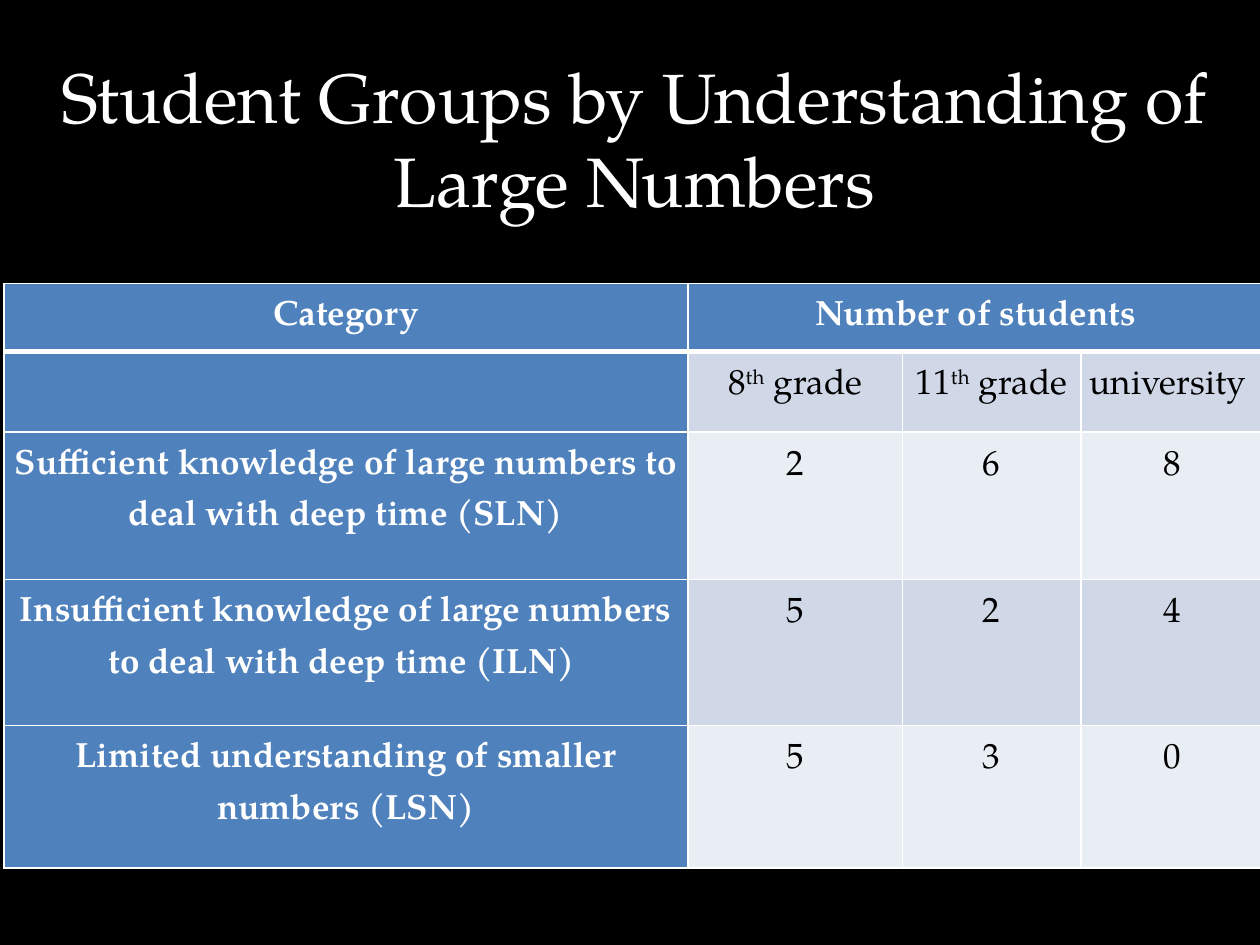
import pptx
import pptx.dml.color
import pptx.enum.text
import pptx.oxml
import pptx.oxml.ns
import pptx.util

Pt = pptx.util.Pt
ALIGN = pptx.enum.text.PP_ALIGN
FONT = "TeX Gyre Pagella"
COLORS = {
    "background": "000000",
    "light": "FFFFFF",
    "dark": "000000",
    "header": "4F81BD",
    "band": "D0D8E8",
    "plain": "E9EDF4",
}
TITLE = ["Student Groups by Understanding of", "Large Numbers"]
ROWS = [
    ["Category", "Number of students", "", ""],
    ["", "8^th^ grade", "11^th^ grade", "university"],
    ["Sufficient knowledge of large numbers to deal with deep time (SLN)", "2", "6", "8"],
    ["Insufficient knowledge of large numbers to deal with deep time (ILN) ", "5", "2", "4"],
    ["Limited understanding of smaller numbers (LSN)", "5", "3", "0"],
]
COLUMN_WIDTHS = [391, 122.4, 102.2, 104.4]
ROW_HEIGHTS = [38.9, 46.1, 84.2, 83.5, 81.4]


def rgb(name):
    return pptx.dml.color.RGBColor.from_string(COLORS[name])


def format_font(font, size, color, bold=False):
    font.name = FONT
    font.size = Pt(size)
    font.bold = bold
    font.color.rgb = rgb(color)


def add_title(page):
    title = page.shapes.title
    title.left, title.top, title.width, title.height = Pt(22.3), Pt(26.6), Pt(680.4), Pt(104.4)
    frame = title.text_frame
    frame.word_wrap = False
    frame.auto_size = pptx.enum.text.MSO_AUTO_SIZE.NONE
    frame.text = "\n".join(TITLE)
    for para in frame.paragraphs:
        para.alignment = ALIGN.CENTER
        format_font(para.font, 40, "light")


def set_borders(cell, **widths):
    """Draw light cell borders; widths maps L, R, T and B to points."""
    properties = cell._tc.get_or_add_tcPr()
    for position, (side, width) in enumerate(widths.items()):
        properties.insert(position, pptx.oxml.parse_xml(
            f'<a:ln{side} {pptx.oxml.ns.nsdecls("a")} w="{Pt(width)}"><a:solidFill>'
            f'<a:srgbClr val="{COLORS["light"]}"/></a:solidFill></a:ln{side}>'))


def write_cell(cell, text, color, bold, alignment):
    """Write text in which ^ marks enclose a superscript."""
    cell.margin_left = cell.margin_right = Pt(5)
    cell.margin_top = cell.margin_bottom = 0
    para = cell.text_frame.paragraphs[0]
    para.alignment = alignment
    para.line_spacing = 1.5
    format_font(para.font, 20, color, bold)
    for index, part in enumerate(text.split("^")):
        if not part:
            continue
        span = para.add_run()
        span.text = part
        format_font(span.font, 20, color, bold)
        if index % 2:
            span._r.get_or_add_rPr().set("baseline", "30000")


def add_student_table(page):
    frame = page.shapes.add_table(len(ROWS), len(COLUMN_WIDTHS), Pt(2.2), Pt(162),
                                  Pt(sum(COLUMN_WIDTHS)), Pt(sum(ROW_HEIGHTS)))
    table = frame.table
    table.first_row = table.horz_banding = False
    for column, width in zip(table.columns, COLUMN_WIDTHS):
        column.width = Pt(width)
    for row, height in zip(table.rows, ROW_HEIGHTS):
        row.height = Pt(height)
    table.cell(0, 1).merge(table.cell(0, 3))

    for row, texts in enumerate(ROWS):
        for column, text in enumerate(texts):
            cell = table.cell(row, column)
            heading = row == 0 or column == 0
            fill = "header" if heading else "band" if row % 2 else "plain"
            cell.fill.solid()
            cell.fill.fore_color.rgb = rgb(fill)
            set_borders(cell, L=1, R=1, T=3 if row == 1 else 1, B=3 if row == 0 else 1)
            alignment = ALIGN.LEFT if text == "university" else ALIGN.CENTER
            write_cell(cell, text, "light" if heading else "dark", heading, alignment)


def main():
    deck = pptx.Presentation()
    deck.slide_width, deck.slide_height = Pt(720), Pt(540)
    page = deck.slides.add_slide(deck.slide_layouts[5])
    page.background.fill.solid()
    page.background.fill.fore_color.rgb = rgb("background")
    add_student_table(page)
    add_title(page)
    deck.save("out.pptx")


if __name__ == "__main__":
    main()
